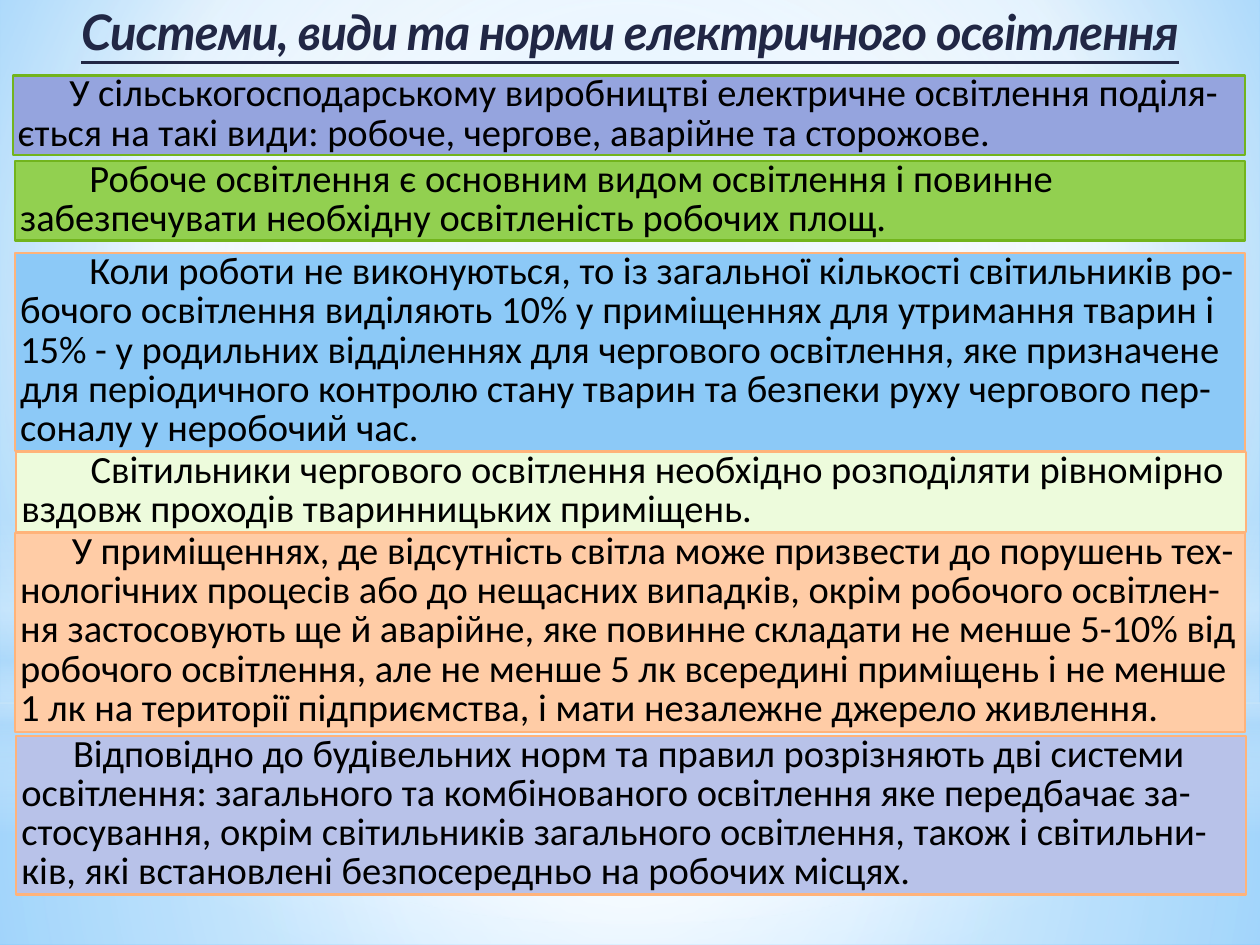
from lxml import etree
from pptx import Presentation
from pptx.dml.color import RGBColor
from pptx.enum.shapes import MSO_SHAPE as SHAPE
from pptx.enum.text import MSO_ANCHOR as ANCHOR, MSO_AUTO_SIZE as AUTO, PP_ALIGN as ALIGN
from pptx.oxml.ns import qn
from pptx.util import Inches, Pt

CENTER = (50, 50, 50, 50)
GREEN, ORANGE = "72B41D", "FFB37A"

GLOWS = [
    (SHAPE.RECTANGLE, 5.58, 1.92,
     [(0, "FFFFFF", 91), (37, "FFFFFF", 76), (100, "B4DCFA", 79)], CENTER),
    (SHAPE.RECTANGLE, 0, 5.58,
     [(0, "FFFFFF", 89), (48, "FFFFFF", 62), (100, "B4DCFA", 79)], CENTER),
    (SHAPE.RECTANGLE, 4.12, 2.5,
     [(0, "FFFFFF", 0), (29, "FFFFFF", 30), (45, "B4DCFA", 40),
      (55, "FFFFFF", 26), (65, "B4DCFA", 60), (100, "FFFFFF", 0)], None),
    (SHAPE.OVAL, 1.75, 5.58, [(0, "FFFFFF", 100), (56, "FFFFFF", 0)], CENTER),
]

BOXES = [
    (0.1, 0.6, 9.78, 0.63, "95A4DE", GREEN, 0.41,
     "У сільськогосподарському виробництві електричне освітлення поділя-ється "
     "на такі види: робоче, чергове, аварійне та сторожове."),
    (0.12, 1.28, 9.76, 0.63, "92D050", GREEN, 0.55,
     "Робоче освітлення є основним видом освітлення і повинне забезпечувати "
     "необхідну освітленість робочих площ."),
    (0.12, 2.01, 9.76, 1.57, "8CC9F7", ORANGE, 0.55,
     "Коли роботи не виконуються, то із загальної кількості світильників "
     "ро-бочого освітлення виділяють 10% у приміщеннях для утримання тварин і "
     "15% - у родильних відділеннях для чергового освітлення, яке призначене "
     "для періодичного контролю стану тварин та безпеки руху чергового "
     "пер-соналу у неробочий час."),
    (0.13, 3.59, 9.76, 0.63, "EDFBDC", ORANGE, 0.55,
     "Світильники чергового освітлення необхідно розподіляти рівномірно "
     "вздовж проходів тваринницьких приміщень."),
    (0.12, 4.23, 9.76, 1.58, "FFCCA6", ORANGE, 0.41,
     "У приміщеннях, де відсутність світла може призвести до порушень "
     "тех-нологічних процесів або до нещасних випадків, окрім робочого "
     "освітлен-ня застосовують ще й аварійне, яке повинне складати не менше "
     "5-10% від робочого освітлення, але не менше 5 лк всередині приміщень і "
     "не менше 1 лк на території підприємства, і мати незалежне джерело "
     "живлення."),
    (0.13, 5.84, 9.76, 1.26, "B8C2E9", ORANGE, 0.41,
     "Відповідно до будівельних норм та правил розрізняють дві системи "
     "освітлення: загального та комбінованого освітлення яке передбачає "
     "за-стосування, окрім світильників загального освітлення, також і "
     "світильни-ків, які встановлені безпосередньо на робочих місцях."),
]


def rgb(color):
    return RGBColor.from_string(color)


def sub(parent, tag, **attrs):
    el = etree.SubElement(parent, qn(tag))
    for key, value in attrs.items():
        el.set(key, str(value))
    return el


def set_gradient(fill, owner, stops, focus=None):
    fill.gradient()
    grad = next(owner.iter(qn("a:gradFill")))
    for child in list(grad):
        grad.remove(child)
    gs_list = sub(grad, "a:gsLst")
    for pos, color, alpha in stops:
        gs = sub(gs_list, "a:gs", pos=pos * 1000)
        clr = sub(gs, "a:srgbClr", val=color)
        if alpha < 100:
            sub(clr, "a:alpha", val=alpha * 1000)
    if focus:
        circle = sub(grad, "a:path", path="circle")
        sides = {side: v * 1000 for side, v in zip("ltrb", focus)}
        sub(circle, "a:fillToRect", **sides)
    else:
        sub(grad, "a:lin", ang=90 * 60000, scaled=0)


def set_text(sp, text, size=22, font="Calibri", color="000000", align=ALIGN.LEFT,
             margin=0.04, indent=0, spacing=None, **style):
    tf = sp.text_frame
    tf.word_wrap = True
    tf.auto_size = AUTO.SHAPE_TO_FIT_TEXT
    tf.vertical_anchor = ANCHOR.TOP
    tf.margin_left = tf.margin_right = Inches(margin)
    tf.margin_top = tf.margin_bottom = 0
    p = tf.paragraphs[0]
    p.alignment = align
    p.line_spacing = 0.85
    p.space_before = Pt(0)
    if indent:
        pPr = p._p.get_or_add_pPr()
        pPr.set("marL", "0")
        pPr.set("indent", str(Inches(indent)))
    r = p.add_run()
    r.text = text
    r.font.size = Pt(size)
    r.font.name = font
    r.font.color.rgb = rgb(color)
    for name, value in style.items():
        setattr(r.font, name, value)
    if spacing:
        r._r.get_or_add_rPr().set("spc", str(int(spacing * 100)))


def add_shape(s, kind, *at):
    sp = s.shapes.add_shape(kind, *map(Inches, at))
    sp.shadow.inherit = False
    return sp


def add_glow(s, kind, top, height, stops, focus):
    sp = add_shape(s, kind, 0, top, 10, height)
    set_gradient(sp.fill, sp.element, stops, focus)
    sp.line.fill.background()


def add_title(s, text):
    sp = s.shapes.title
    sp.left, sp.top, sp.width, sp.height = map(Inches, (0.12, 0.08, 9.76, 0.4))
    set_text(sp, text, size=28, font="Lato", color="212745", align=ALIGN.CENTER,
             margin=0, spacing=-0.5, bold=True, italic=True, underline=True)
    sp.element.getparent().append(sp.element)


def add_box(s, left, top, width, height, fill, line, indent, text):
    sp = add_shape(s, SHAPE.RECTANGLE, left, top, width, height)
    sp.fill.solid()
    sp.fill.fore_color.rgb = rgb(fill)
    sp.line.color.rgb = rgb(line)
    sp.line.width = Pt(1.25)
    set_text(sp, text, indent=indent)


def main():
    prs = Presentation()
    prs.slide_width, prs.slide_height = Inches(10), Inches(7.5)
    s = prs.slides.add_slide(prs.slide_layouts[5])
    set_gradient(s.background.fill, s.element,
                 [(0, "9ED5FF", 100), (60, "FFFFFF", 100), (100, "5BB9FF", 100)],
                 (20, 10, 20, 60))
    for glow in GLOWS:
        add_glow(s, *glow)
    add_title(s, "Системи, види та норми електричного освітлення")
    for box in BOXES:
        add_box(s, *box)
    prs.save("out.pptx")


if __name__ == "__main__":
    main()
